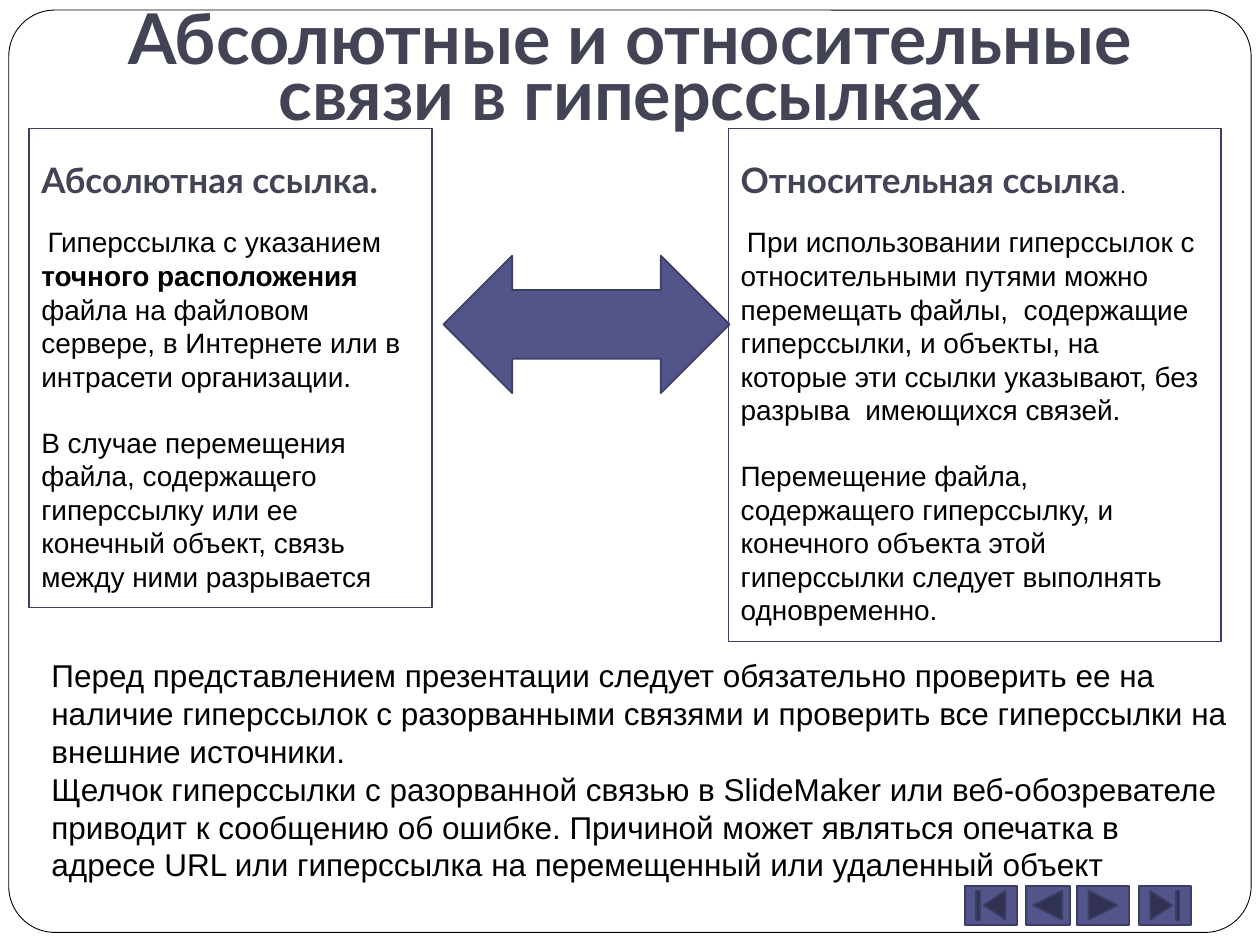
from pptx import Presentation
from pptx.dml.color import RGBColor
from pptx.enum.shapes import MSO_SHAPE
from pptx.enum.text import MSO_ANCHOR, PP_ALIGN
from pptx.util import Inches, Pt

COLORS = {"frame": "000000", "text": "000000", "heading": "424456",
          "accent": "53548A", "edge": "3D3E66", "paper": "FFFFFF"}
BODY_FONT, HEADING_FONT = "Arial", "Lato"
LEFT, CENTER = PP_ALIGN.LEFT, PP_ALIGN.CENTER
TOP, BOTTOM = MSO_ANCHOR.TOP, MSO_ANCHOR.BOTTOM

TITLE = "Абсолютные и относительные связи в гиперссылках"

# Each definition is a list of (text, bold) pieces.
CARDS = [
    {"box": (0.23, 1.02, 3.2, 3.8),
     "heading": "Абсолютная ссылка.", "stop": "",
     "definition": [
         ("Гиперссылка с указанием ", False),
         ("точного расположения ", True),
         ("файла на файловом сервере, в Интернете или в интрасети "
          "организации.", False)],
     "moving": "В случае перемещения файла, содержащего гиперссылку или ее "
               "конечный объект, связь между ними разрывается"},
    {"box": (5.78, 1.02, 3.91, 4.07),
     "heading": "Относительная ссылка", "stop": ".",
     "definition": [
         ("При использовании гиперссылок с относительными путями можно "
          "перемещать файлы,  содержащие гиперссылки, и объекты, на которые "
          "эти ссылки указывают, без разрыва  имеющихся связей.", False)],
     "moving": "Перемещение файла, содержащего гиперссылку, и конечного "
               "объекта этой гиперссылки следует выполнять одновременно."},
]

ADVICE = [
    "Перед представлением презентации следует обязательно проверить ее на "
    "наличие гиперссылок с разорванными связями и проверить все гиперссылки "
    "на внешние источники.",
    "Щелчок гиперссылки с разорванной связью в SlideMaker или "
    "веб-обозревателе приводит к сообщению об ошибке. Причиной может являться "
    "опечатка в адресе URL или гиперссылка на перемещенный или удаленный "
    "объект",
]

# (button, left, width)
BUTTONS = [
    (MSO_SHAPE.ACTION_BUTTON_BEGINNING, 7.66, 0.41),
    (MSO_SHAPE.ACTION_BUTTON_BACK_OR_PREVIOUS, 8.14, 0.35),
    (MSO_SHAPE.ACTION_BUTTON_FORWARD_OR_NEXT, 8.55, 0.41),
    (MSO_SHAPE.ACTION_BUTTON_END, 9.04, 0.41),
]
BUTTON_TOP, BUTTON_HEIGHT = 7.03, 0.31


def rgb(name):
    return RGBColor.from_string(COLORS[name])


def add_figure(shapes, preset, box, fill, edge, weight):
    figure = shapes.add_shape(preset, *map(Inches, box))
    figure.shadow.inherit = False
    if fill:
        figure.fill.solid()
        figure.fill.fore_color.rgb = rgb(fill)
    else:
        figure.fill.background()
    figure.line.color.rgb = rgb(edge)
    figure.line.width = Pt(weight)
    return figure


def style(font, size, bold=False, name=BODY_FONT, color="text"):
    font.size, font.bold, font.name = Pt(size), bold, name
    font.color.rgb = rgb(color)


def prepare_frame(shape, anchor=TOP):
    frame = shape.text_frame
    frame.word_wrap = True
    frame.vertical_anchor = anchor
    return frame


def add_card(shapes, card):
    frame = prepare_frame(add_figure(shapes, MSO_SHAPE.RECTANGLE, card["box"],
                                     None, "edge", 0.75))
    frame.margin_top = Inches(0.24)

    heading = frame.paragraphs[0]
    run = heading.add_run()
    run.text = card["heading"]
    style(run.font, 20, True, HEADING_FONT, "heading")
    if card["stop"]:
        stop = heading.add_run()
        stop.text = card["stop"]
        style(stop.font, 12)

    definition = frame.add_paragraph()
    definition.space_before = Pt(13.8)
    definition._p.get_or_add_pPr().set("indent", str(Inches(0.05)))
    for text, bold in card["definition"]:
        run = definition.add_run()
        run.text = text
        style(run.font, 16, bold)

    moving = frame.add_paragraph()
    moving.text = card["moving"]
    moving.space_before = Pt(18.4)
    style(moving.font, 16)

    for paragraph in frame.paragraphs:
        paragraph.alignment = LEFT


def main():
    prs = Presentation()
    prs.slide_width, prs.slide_height = Inches(10), Inches(7.5)
    shapes = prs.slides.add_slide(prs.slide_layouts[6]).shapes

    border = add_figure(shapes, MSO_SHAPE.ROUNDED_RECTANGLE,
                        (0.07, 0.08, 9.86, 7.32), "paper", "frame", 0.5)
    border.adjustments[0] = 0.05

    title_box = shapes.add_textbox(*map(Inches, (0.75, 0.23, 8.5, 0.94)))
    title_frame = prepare_frame(title_box, BOTTOM)
    title_frame.margin_bottom = Inches(0.1)
    title = title_frame.paragraphs[0]
    title.text = TITLE
    title.alignment = CENTER
    title.line_spacing = Pt(32)
    style(title.font, 40, True, HEADING_FONT, "heading")

    navigation = shapes.add_group_shape().shapes
    for preset, left, width in BUTTONS:
        add_figure(navigation, preset,
                   (left, BUTTON_TOP, width, BUTTON_HEIGHT),
                   "accent", "edge", 1)

    for card in CARDS:
        add_card(shapes, card)
    add_figure(shapes, MSO_SHAPE.LEFT_RIGHT_ARROW, (3.52, 2.03, 2.27, 1.09),
               "accent", "edge", 1)

    advice_box = shapes.add_textbox(*map(Inches, (0.31, 5.16, 9.53, 1.92)))
    advice_frame = prepare_frame(advice_box)
    for number, text in enumerate(ADVICE):
        advice = (advice_frame.add_paragraph() if number
                  else advice_frame.paragraphs[0])
        advice.text = text
        style(advice.font, 18)

    prs.save("out.pptx")


if __name__ == "__main__":
    main()
